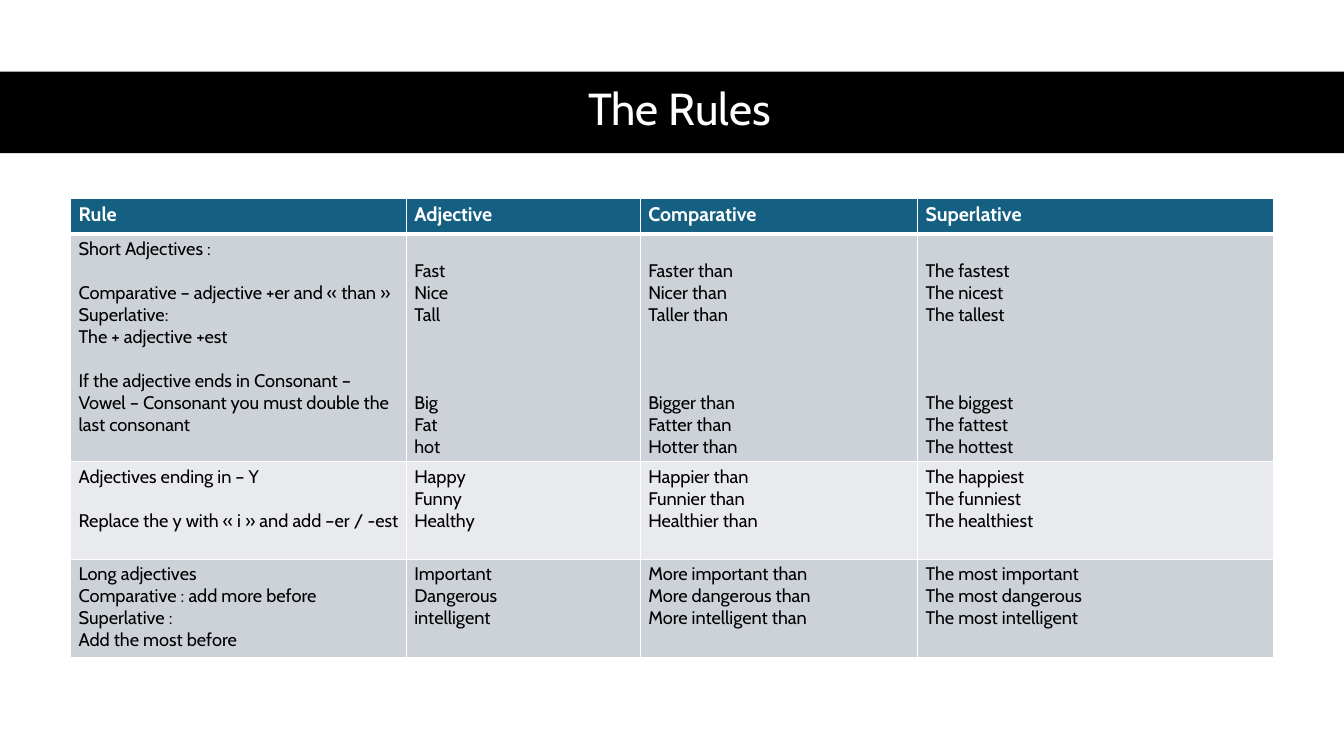
"""Build a slide with a table of the rules for comparatives and superlatives."""

import dataclasses

import pptx
import pptx.dml.color
import pptx.enum.shapes
import pptx.enum.text
import pptx.oxml
import pptx.oxml.ns
import pptx.util

EMU_PER_PX = 9144


@dataclasses.dataclass(frozen=True)
class Theme:
    """Hold the colours and type sizes of the slide."""

    font: str = "Cabin"
    white: str = "FFFFFF"
    black: str = "000000"
    heading_fill: str = "156082"
    band_fills: tuple = ("CCD2D8", "E8EAED")
    title_size: int = 32
    heading_size: int = 14
    body_size: int = 13
    body_line: float = 15.8
    thin_border: int = 1
    thick_border: int = 3


THEME = Theme()
COLUMN_WIDTHS = (333, 232, 275, 353)
ROW_HEIGHTS = (35, 225, 97, 97)
CELL_MARGINS = (8, 4)
LINE_HEIGHT = 22
HEADINGS = ("Rule", "Adjective", "Comparative", "Superlative")


@dataclasses.dataclass(frozen=True)
class CellText:
    """Hold groups of lines, the empty lines between groups and those above."""

    groups: tuple
    gap_lines: int = 1
    lead_lines: int = 0


def example_cell(*groups):
    """Return example words that line up with the rules for short adjectives."""
    return CellText(groups, gap_lines=3, lead_lines=1)


RULES = (
    (
        CellText((
            ("Short Adjectives :",),
            ("Comparative – adjective +er and « than »", "Superlative:", "The + adjective +est"),
            ("If the adjective ends in Consonant – Vowel – Consonant you must double the last consonant",),
        )),
        example_cell(("Fast", "Nice", "Tall"), ("Big", "Fat", "hot")),
        example_cell(("Faster than", "Nicer than", "Taller than"),
                     ("Bigger than", "Fatter than", "Hotter than")),
        example_cell(("The fastest", "The nicest", "The tallest"),
                     ("The biggest", "The fattest", "The hottest")),
    ),
    (
        CellText((("Adjectives ending in – Y",),
                  ("Replace the y with « i » and add –er / -est",))),
        CellText((("Happy", "Funny", "Healthy"),)),
        CellText((("Happier than", "Funnier than", "Healthier than"),)),
        CellText((("The happiest", "The funniest", "The healthiest"),)),
    ),
    (
        CellText((("Long adjectives", "Comparative : add more before",
                   "Superlative :", "Add the most before"),)),
        CellText((("Important", "Dangerous", "intelligent"),)),
        CellText((("More important than", "More dangerous than", "More intelligent than"),)),
        CellText((("The most important", "The most dangerous", "The most intelligent"),)),
    ),
)


def px(length):
    """Turn a length in px into EMU."""
    return pptx.util.Emu(length * EMU_PER_PX)


def set_fill(target, color):
    """Give a shape or cell a solid fill."""
    target.fill.solid()
    target.fill.fore_color.rgb = pptx.dml.color.RGBColor.from_string(color)


def format_runs(paragraph, size, color, bold=False):
    """Set the font of every run in a paragraph."""
    for run in paragraph.runs:
        run.font.name = THEME.font
        run.font.size = pptx.util.Pt(size)
        run.font.bold = bold
        run.font.color.rgb = pptx.dml.color.RGBColor.from_string(color)


def add_band(slide, left, top, width, height):
    """Add the plain black band behind the title."""
    band = slide.shapes.add_shape(
        pptx.enum.shapes.MSO_SHAPE.RECTANGLE, px(left), px(top), px(width), px(height))
    band.shadow.inherit = False
    set_fill(band, THEME.black)
    band.line.fill.background()


def add_title(slide, text, left, top, width, height):
    """Add the centred title."""
    text_frame = slide.shapes.add_textbox(px(left), px(top), px(width), px(height)).text_frame
    text_frame.word_wrap = True
    text_frame.vertical_anchor = pptx.enum.text.MSO_ANCHOR.MIDDLE
    text_frame.text = text
    paragraph = text_frame.paragraphs[0]
    paragraph.alignment = pptx.enum.text.PP_ALIGN.CENTER
    paragraph.line_spacing = 0.9
    format_runs(paragraph, THEME.title_size, THEME.white)


def set_borders(cell, top_width, bottom_width):
    """Draw white borders around a cell."""
    properties = cell._tc.get_or_add_tcPr()
    widths = {"lnL": THEME.thin_border, "lnR": THEME.thin_border,
              "lnT": top_width, "lnB": bottom_width}
    for index, (side, width) in enumerate(widths.items()):
        border = pptx.oxml.parse_xml(
            f'<a:{side} {pptx.oxml.ns.nsdecls("a")} w="{pptx.util.Pt(width)}">'
            f'<a:solidFill><a:srgbClr val="{THEME.white}"/></a:solidFill></a:{side}>')
        properties.insert(index, border)


def style_cell(cell, fill, top_width, bottom_width, lead_lines=0):
    """Set the fill, margins and borders of a cell."""
    side, edge = CELL_MARGINS
    set_fill(cell, fill)
    cell.margin_left = cell.margin_right = px(side)
    cell.margin_top = px(edge + lead_lines * LINE_HEIGHT)
    cell.margin_bottom = px(edge)
    set_borders(cell, top_width, bottom_width)


def fill_heading(cell, text):
    """Write a column heading."""
    style_cell(cell, THEME.heading_fill, THEME.thin_border, THEME.thick_border)
    cell.text_frame.text = text
    format_runs(cell.text_frame.paragraphs[0], THEME.heading_size, THEME.white, bold=True)


def fill_body(cell, content, fill, top_width):
    """Write groups of lines, set apart by paragraph spacing."""
    style_cell(cell, fill, top_width, THEME.thin_border, content.lead_lines)
    lines = [line for group in content.groups for line in group]
    cell.text_frame.text = "\n".join(lines)
    paragraphs = cell.text_frame.paragraphs
    for paragraph in paragraphs:
        format_runs(paragraph, THEME.body_size, THEME.black)
    start = 0
    for group in content.groups[:-1]:
        start += len(group)
        paragraphs[start].space_before = pptx.util.Pt(content.gap_lines * THEME.body_line)


def add_rules_table(slide, left, top):
    """Add the table with its headings and rules."""
    table = slide.shapes.add_table(
        len(ROW_HEIGHTS), len(COLUMN_WIDTHS), px(left), px(top),
        px(sum(COLUMN_WIDTHS)), px(sum(ROW_HEIGHTS))).table
    for column, width in zip(table.columns, COLUMN_WIDTHS):
        column.width = px(width)
    for row, height in zip(table.rows, ROW_HEIGHTS):
        row.height = px(height)
    for column_index, heading in enumerate(HEADINGS):
        fill_heading(table.cell(0, column_index), heading)
    for row_index, rule in enumerate(RULES):
        fill = THEME.band_fills[row_index % len(THEME.band_fills)]
        top_width = THEME.thin_border if row_index else THEME.thick_border
        for column_index, content in enumerate(rule):
            fill_body(table.cell(row_index + 1, column_index), content, fill, top_width)


def main():
    """Build and save the presentation."""
    presentation = pptx.Presentation()
    presentation.slide_width = px(1333)
    presentation.slide_height = px(750)
    slide = presentation.slides.add_slide(presentation.slide_layouts[6])
    add_band(slide, 0, 71, 1333, 81)
    add_title(slide, "The Rules", 61, 70, 1226, 81)
    add_rules_table(slide, 70, 197)
    presentation.save("out.pptx")


if __name__ == "__main__":
    main()
